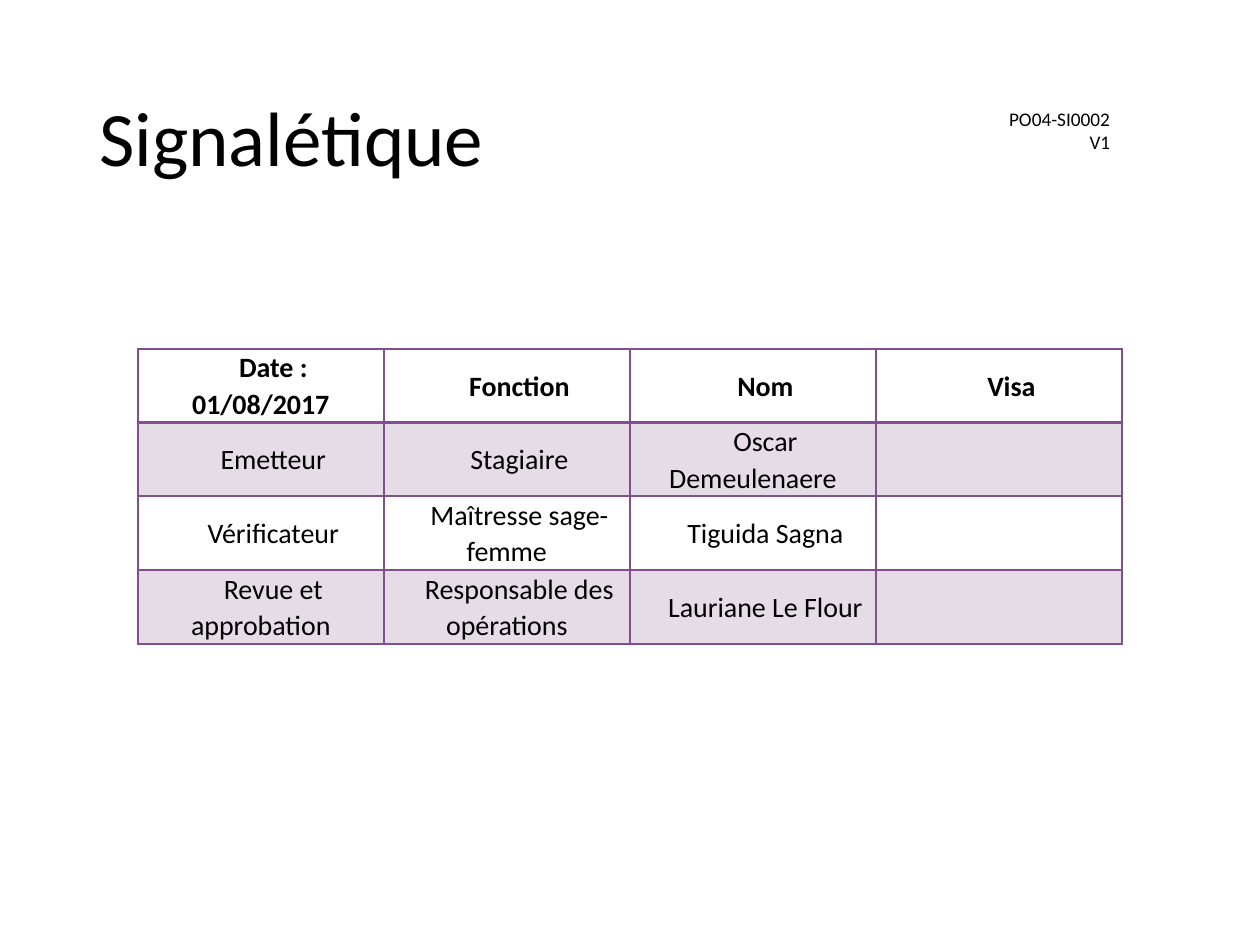
from dataclasses import dataclass

from lxml.etree import SubElement
from pptx import Presentation
from pptx.dml.color import RGBColor
from pptx.enum.text import MSO_ANCHOR, PP_ALIGN
from pptx.oxml.ns import qn
from pptx.util import Pt


@dataclass(frozen=True)
class Theme:
    font: str = "Calibri"
    text: str = "000000"
    accent: str = "7F508B"
    band_alpha: int = 20
    title_size: int = 44
    table_size: int = 16
    reference_size: int = 11


theme = Theme()


def write(tf, text, size, align=PP_ALIGN.LEFT, bold=False, line=None, space=None, indent=None):
    """Fill a text frame, one paragraph for each line of text."""
    for i, words in enumerate(text.split("\n")):
        p = tf.add_paragraph() if i else tf.paragraphs[0]
        p.alignment = align
        p.line_spacing = line
        if space is not None:
            p.space_before = p.space_after = Pt(space)
        if indent is not None:
            pPr = p._p.get_or_add_pPr()
            pPr.set("marL", "0")
            pPr.set("indent", str(Pt(indent)))
        r = p.add_run()
        r.text = words
        r.font.name = theme.font
        r.font.size = Pt(size)
        r.font.bold = bold
        r.font.color.rgb = RGBColor.from_string(theme.text)


def set_border(cell, side, width):
    ln = SubElement(cell._tc.get_or_add_tcPr(), qn(f"a:ln{side}"), w=str(Pt(width)))
    fill = SubElement(ln, qn("a:solidFill"))
    SubElement(fill, qn("a:srgbClr"), val=theme.accent)


prs = Presentation()
prs.slide_width, prs.slide_height = Pt(720), Pt(540)
s = prs.slides.add_slide(prs.slide_layouts[5])

# Title
title = s.shapes.title
title.left, title.top, title.width, title.height = Pt(49.5), Pt(28.75), Pt(621), Pt(104.4)
title.text_frame.vertical_anchor = MSO_ANCHOR.MIDDLE
write(title.text_frame, "Signalétique", theme.title_size, line=0.9)

# Approval table
rows = [
    ["Date\u00a0: 01/08/2017", "Fonction", "Nom", "Visa"],
    ["Emetteur", "Stagiaire", "Oscar Demeulenaere", ""],
    ["Vérificateur", "Maîtresse sage-femme", "Tiguida Sagna", ""],
    ["Revue et approbation", "Responsable des opérations", "Lauriane Le Flour", ""],
]
col_width, header_height, row_height = 140.6, 37.5, 42.25
table = s.shapes.add_table(
    len(rows), len(rows[0]), Pt(78.75), Pt(199.3),
    Pt(col_width * len(rows[0])), Pt(header_height + row_height * (len(rows) - 1)),
).table
table.horz_banding = False
for col in table.columns:
    col.width = Pt(col_width)

for i, row in enumerate(rows):
    table.rows[i].height = Pt(row_height if i else header_height)
    for j, text in enumerate(row):
        cell = table.cell(i, j)
        cell.vertical_anchor = MSO_ANCHOR.MIDDLE
        cell.margin_left = cell.margin_right = Pt(5.4)
        cell.margin_top = cell.margin_bottom = 0
        for side in "LRTB":
            under_header = (i, side) in [(0, "B"), (1, "T")]
            set_border(cell, side, 2 if under_header else 1)
        if i % 2:
            cell.fill.solid()
            cell.fill.fore_color.rgb = RGBColor.from_string(theme.accent)
            color = cell._tc.tcPr.find(qn("a:solidFill")).find(qn("a:srgbClr"))
            SubElement(color, qn("a:alpha"), val=str(theme.band_alpha * 1000))
        else:
            cell.fill.background()
        if text:
            write(cell.text_frame, text, theme.table_size, align=PP_ALIGN.CENTER,
                  bold=i == 0, line=1.07, space=6, indent=14.2)

# Document reference
reference = s.shapes.add_textbox(Pt(530), Pt(57.6), Pt(111.5), Pt(33.85))
reference.text_frame.word_wrap = True
write(reference.text_frame, "PO04-SI0002\nV1", theme.reference_size, align=PP_ALIGN.RIGHT)

prs.save("out.pptx")
